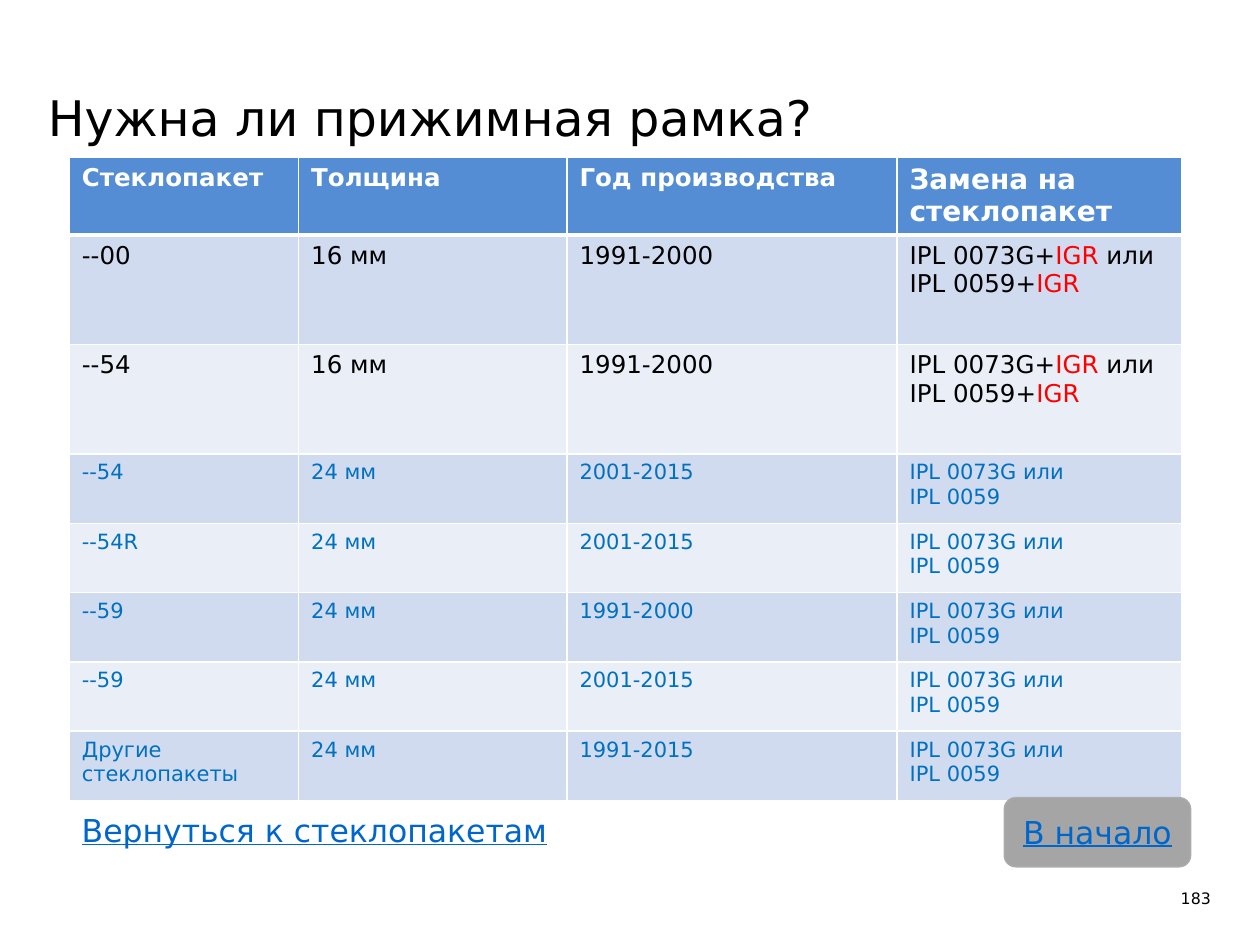
import pptx
import pptx.dml.color
import pptx.enum.shapes
import pptx.enum.text
import pptx.oxml
import pptx.oxml.ns
import pptx.util

Inches = pptx.util.Inches
Pt = pptx.util.Pt
ALIGN = pptx.enum.text.PP_ALIGN
ANCHOR = pptx.enum.text.MSO_ANCHOR
SHAPES = pptx.enum.shapes.MSO_SHAPE

COLORS = {
    "black": "000000", "white": "FFFFFF", "header": "548DD4",
    "band_dark": "D1DBEF", "band_light": "E9EEF7", "blue": "0070C0",
    "red": "FF0000", "link": "0066CC", "button": "A5A5A5", "button_line": "ACACAC",
}
COLUMN_WIDTHS = [1.82, 2.13, 2.62, 2.26]
ROW_HEIGHTS = [0.61] + [0.87] * 2 + [0.55] * 5
HEADERS = ["Стеклопакет", "Толщина", "Год производства", "Замена на стеклопакет"]
FRAME_REQUIRED = "IPL 0073G+IGR или\nIPL 0059+IGR"
FRAME_NOT_REQUIRED = "IPL 0073G или\nIPL 0059"
GLASS_UNITS = [
    ("--00", 16, "1991-2000"),
    ("--54", 16, "1991-2000"),
    ("--54", 24, "2001-2015"),
    ("--54R", 24, "2001-2015"),
    ("--59", 24, "1991-2000"),
    ("--59", 24, "2001-2015"),
    ("Другие стеклопакеты", 24, "1991-2015"),
]


def rgb(name):
    """Return the named colour."""
    return pptx.dml.color.RGBColor.from_string(COLORS[name])


class SlideBuilder:
    """Hold the text style and the current slide."""

    def __init__(self, slide, font_name="DejaVu Sans"):
        """Keep the slide and its font."""
        self.slide = slide
        self.font_name = font_name

    def style(self, paragraph, size, color, align=ALIGN.LEFT, bold=False, underline=False):
        """Format one paragraph."""
        paragraph.alignment = align
        font = paragraph.font
        font.name = self.font_name
        font.size = Pt(size)
        font.bold = bold
        font.underline = underline
        font.color.rgb = rgb(color)

    def frame(self, shape, margins, anchor=ANCHOR.TOP):
        """Set the insets and anchor of a shape's text and return its first paragraph."""
        frame = shape.text_frame
        frame.word_wrap = True
        frame.auto_size = pptx.enum.text.MSO_AUTO_SIZE.NONE
        frame.vertical_anchor = anchor
        frame.margin_left, frame.margin_top, frame.margin_right, frame.margin_bottom = map(Inches, margins)
        return frame.paragraphs[0]

    def title(self, text, box):
        """Place the title."""
        shape = self.slide.shapes.title
        shape.left, shape.top, shape.width, shape.height = map(Inches, box)
        paragraph = self.frame(shape, (0, 0, 0, 0.04), ANCHOR.BOTTOM)
        paragraph.text = text
        paragraph.line_spacing = 1.05
        self.style(paragraph, 28, "black")

    def page_number(self, text, box):
        """Add the page number."""
        shape = self.slide.shapes.add_textbox(*map(Inches, box))
        paragraph = self.frame(shape, (0, 0, 0, 0))
        paragraph.text = text
        self.style(paragraph, 9, "black", ALIGN.RIGHT)

    def link_box(self, text, box, kind, fill, margins, anchor, align, line=None):
        """Add a filled shape with underlined link text."""
        shape = self.slide.shapes.add_shape(kind, *map(Inches, box))
        shape.shadow.inherit = False
        shape.fill.solid()
        shape.fill.fore_color.rgb = rgb(fill)
        if line:
            shape.line.color.rgb = rgb(line)
            shape.line.width = Pt(0.75)
        else:
            shape.line.fill.background()
        paragraph = self.frame(shape, margins, anchor)
        paragraph.text = text
        self.style(paragraph, 18, "link", align, underline=True)

    def borders(self, cell, bottom):
        """Draw white borders, with the given width at the bottom."""
        properties = cell._tc.get_or_add_tcPr()
        sides = [("lnL", 1), ("lnR", 1), ("lnT", 1), ("lnB", bottom)]
        for index, (side, width) in enumerate(sides):
            properties.insert(index, pptx.oxml.parse_xml(
                f'<a:{side} {pptx.oxml.ns.nsdecls("a")} w="{Pt(width)}"><a:solidFill>'
                f'<a:srgbClr val="{COLORS["white"]}"/></a:solidFill></a:{side}>'))

    def cell(self, cell, text, size, color, fill, bold=False, bottom=1):
        """Fill one table cell, with the frame code IGR in red."""
        cell.fill.solid()
        cell.fill.fore_color.rgb = rgb(fill)
        self.borders(cell, bottom)
        for index, line in enumerate(text.split("\n")):
            frame = cell.text_frame
            paragraph = frame.add_paragraph() if index else frame.paragraphs[0]
            self.style(paragraph, size, color, bold=bold)
            for part in filter(None, line.partition("IGR")):
                run = paragraph.add_run()
                run.text = part
                if part == "IGR":
                    run.font.color.rgb = rgb("red")

    def table(self, box):
        """Add the table of glass units."""
        shape = self.slide.shapes.add_table(
            len(ROW_HEIGHTS), len(COLUMN_WIDTHS), *map(Inches, box))
        table = shape.table
        for column, width in zip(table.columns, COLUMN_WIDTHS):
            column.width = Inches(width)
        for row, height in zip(table.rows, ROW_HEIGHTS):
            row.height = Inches(height)
        for column, text in enumerate(HEADERS):
            size = 16 if column == 3 else 14
            self.cell(table.cell(0, column), text, size, "white", "header", True, 3)
        for row, (name, thickness, years) in enumerate(GLASS_UNITS, 1):
            thin = thickness == 16
            size, color = (14, "black") if thin else (12, "blue")
            fill = "band_dark" if row % 2 else "band_light"
            replacement = FRAME_REQUIRED if thin else FRAME_NOT_REQUIRED
            for column, text in enumerate([name, f"{thickness} мм", years, replacement]):
                self.cell(table.cell(row, column), text, size, color, fill)


def main():
    """Build and save the slide."""
    presentation = pptx.Presentation()
    presentation.slide_width = Inches(10)
    presentation.slide_height = Inches(7.5)
    builder = SlideBuilder(presentation.slides.add_slide(presentation.slide_layouts[5]))
    builder.title("Нужна ли прижимная рамка?", (0.38, 0.18, 7.69, 1.02))
    builder.page_number("183", (9.28, 7.05, 0.33, 0.24))
    builder.table((0.55, 1.25, sum(COLUMN_WIDTHS), sum(ROW_HEIGHTS)))
    builder.link_box("В начало", (7.97, 6.33, 1.48, 0.55), SHAPES.FLOWCHART_ALTERNATE_PROCESS,
                     "button", (0, 0, 0, 0), ANCHOR.MIDDLE, ALIGN.CENTER, "button_line")
    builder.link_box("Вернуться к стеклопакетам", (0.55, 6.39, 4.38, 0.4), SHAPES.RECTANGLE,
                     "white", (0.1, 0.05, 0.1, 0.05), ANCHOR.TOP, ALIGN.LEFT)
    presentation.save("out.pptx")


if __name__ == "__main__":
    main()
